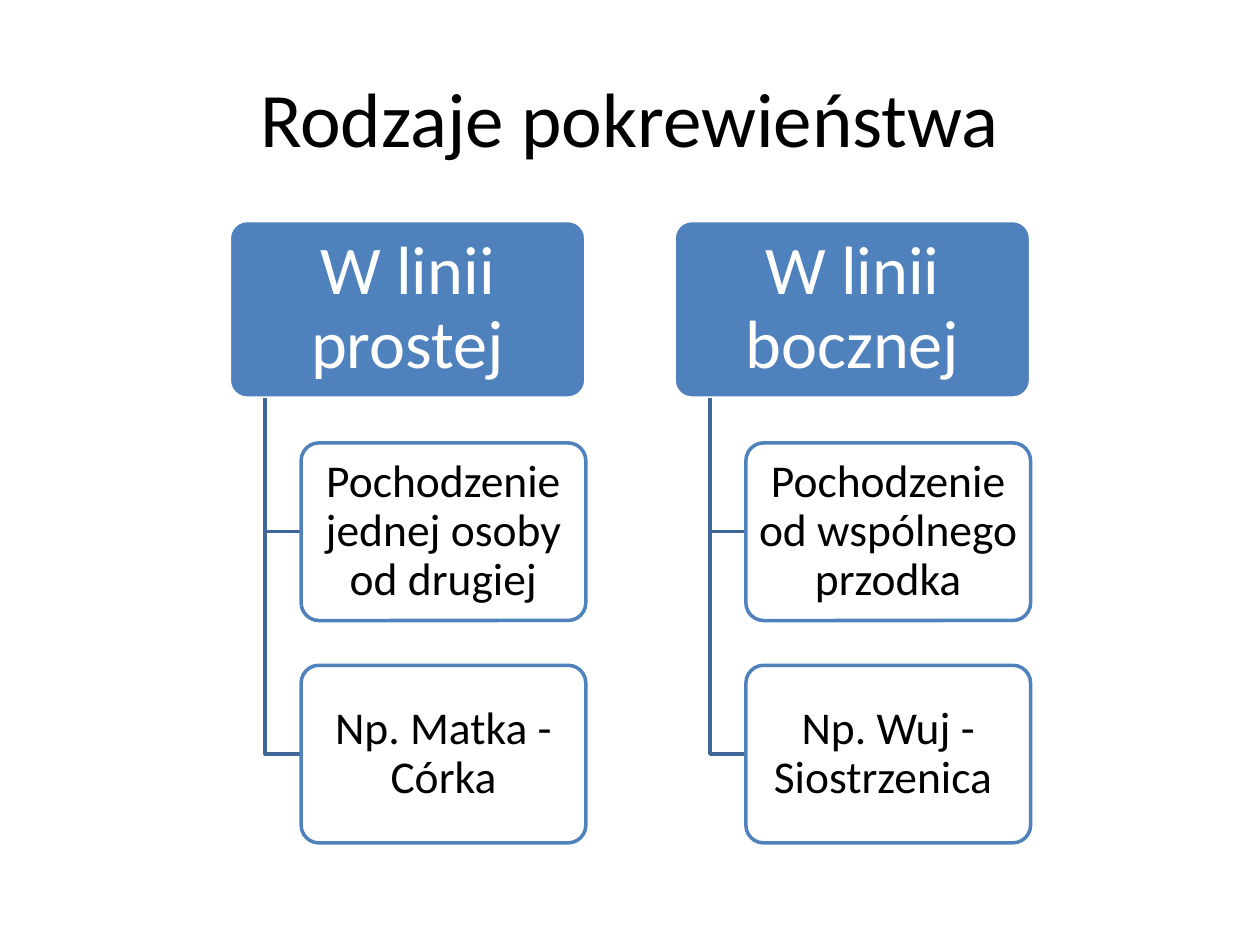
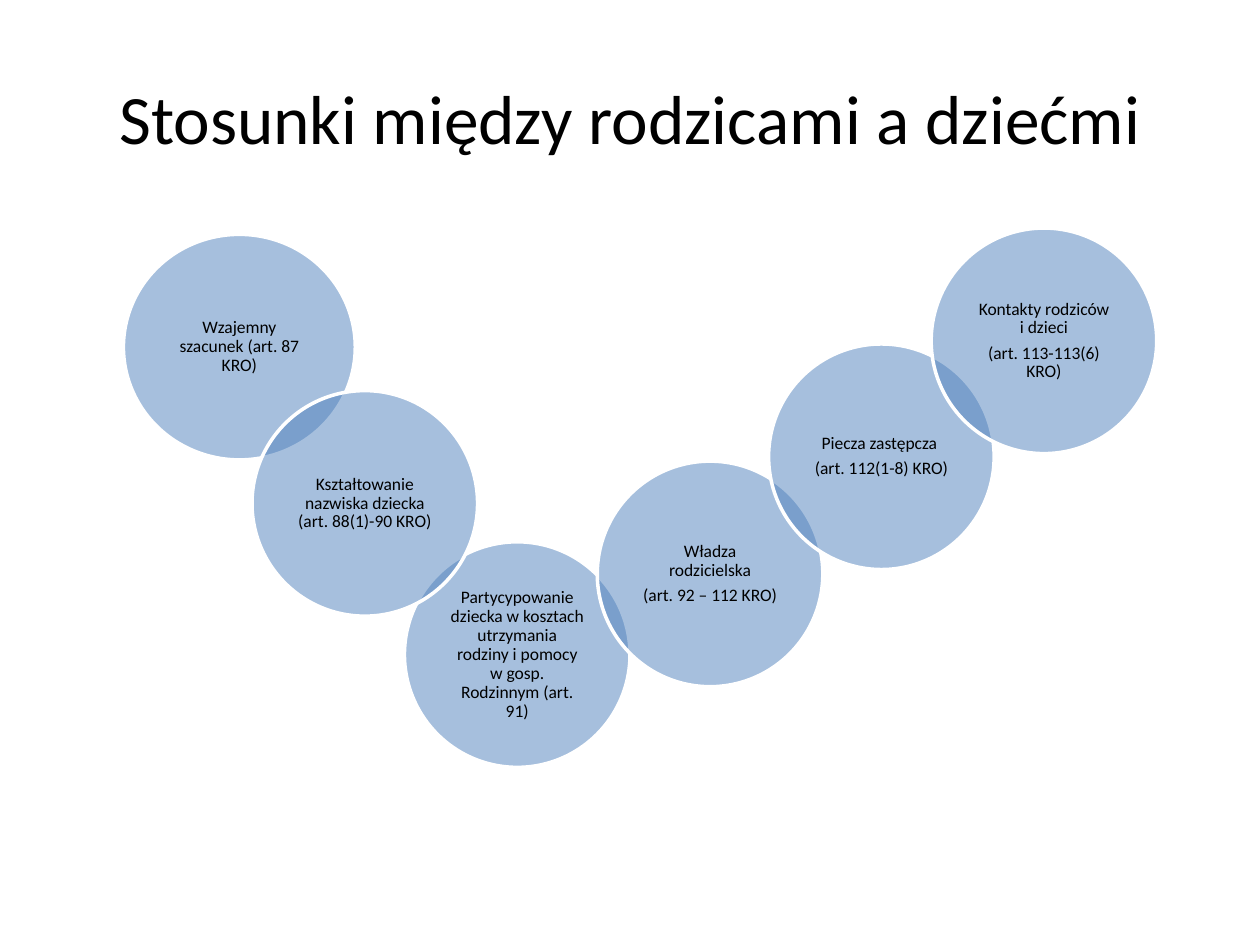
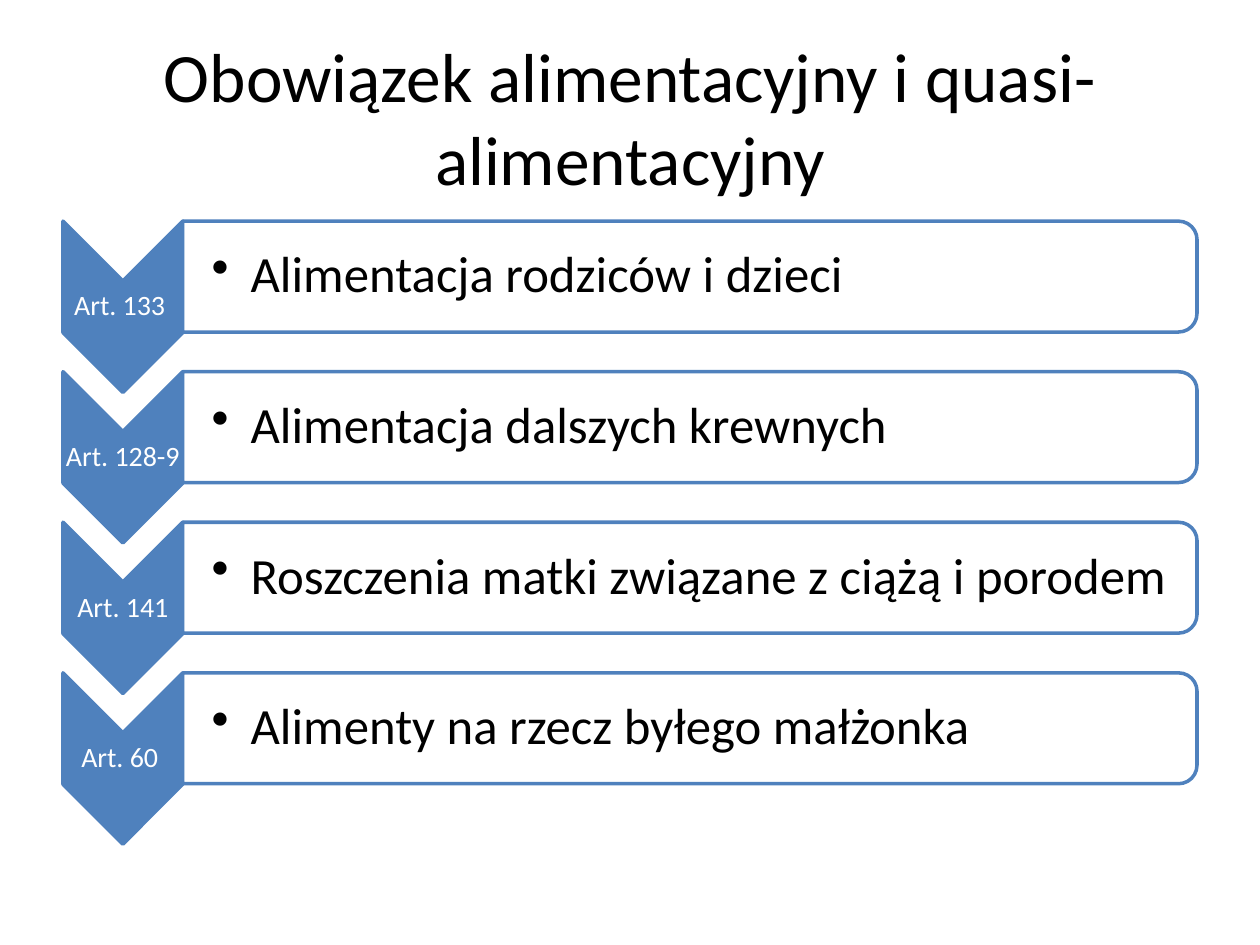
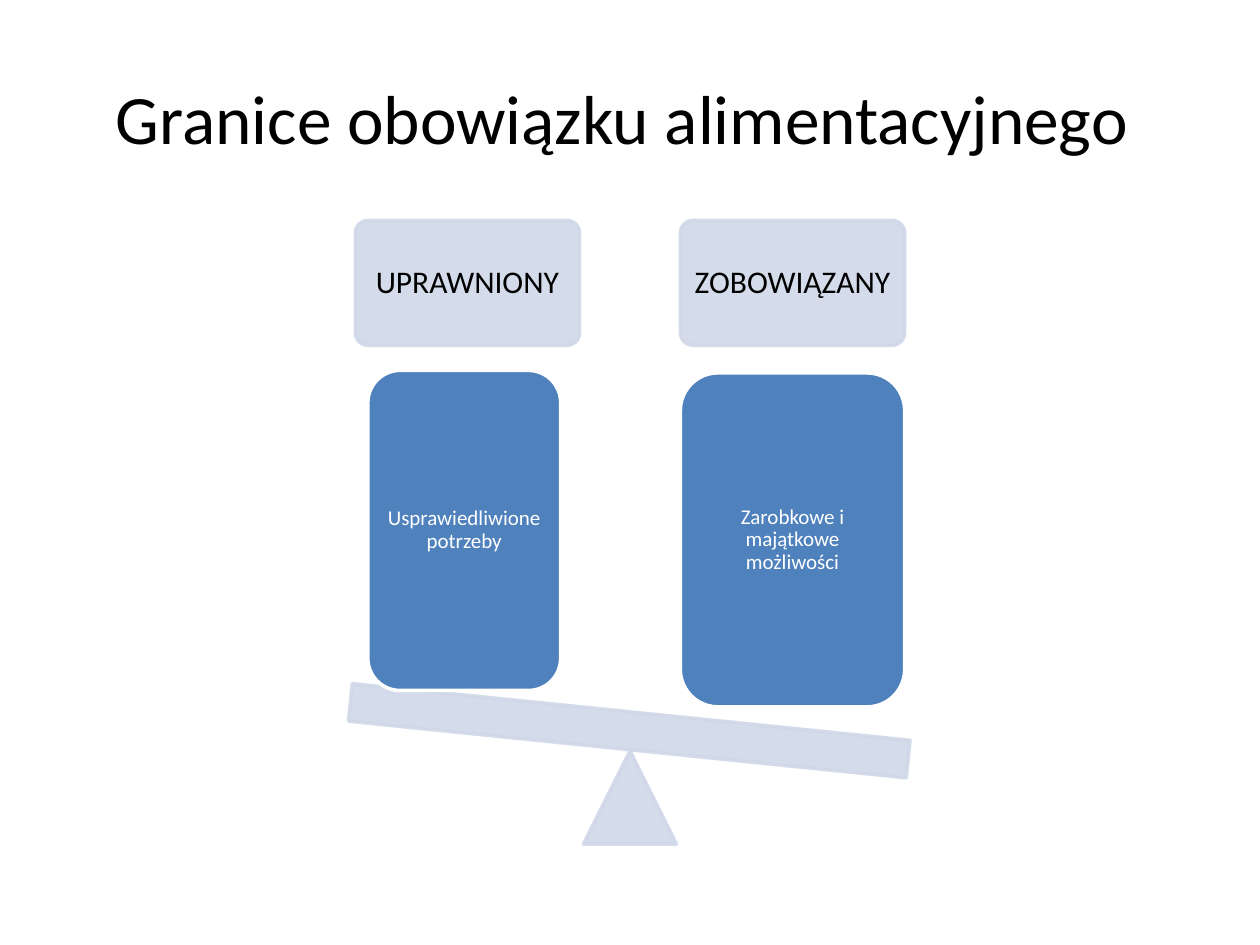
"""Build four slides of diagrams on kinship and maintenance law."""
from lxml.etree import SubElement
from pptx import Presentation
from pptx.dml.color import RGBColor
from pptx.enum.shapes import MSO_SHAPE as Form
from pptx.enum.text import MSO_ANCHOR as Anchor, MSO_AUTO_SIZE as Fit, PP_ALIGN as Align
from pptx.oxml.ns import qn
from pptx.util import Inches, Pt

BLACK = RGBColor(0x00, 0x00, 0x00)
WHITE = RGBColor(0xFF, 0xFF, 0xFF)
BLUE = RGBColor(0x4F, 0x81, 0xBD)
DARK = RGBColor(0x3F, 0x67, 0x97)
PALE = RGBColor(0xD0, 0xD8, 0xE8)
FONT = "Calibri"
WIDE, HIGH = Inches(10), Inches(7.5)
COLS, ROWS = 100, 75


def write(frame, text, size, color=BLACK, align=Align.CENTER, pad=(0, 0),
          lead=0.9, after=0.35, hang=0):
    frame.word_wrap = True
    frame.auto_size = Fit.NONE
    frame.vertical_anchor = Anchor.MIDDLE
    side, edge = pad
    frame.margin_left = frame.margin_right = Inches(side)
    frame.margin_top = frame.margin_bottom = Inches(edge)
    frame.text = text
    for para in frame.paragraphs:
        if hang:
            para.level = 1
            props = para._p.get_or_add_pPr()
            props.set("marL", str(Inches(hang)))
            props.set("indent", str(-Inches(hang)))
            SubElement(props, qn("a:buChar")).set("char", "•")
        para.alignment = align
        para.line_spacing = lead
        para.space_before = Pt(0)
        para.space_after = Pt(size * after)
        for run in para.runs:
            run.font.name = FONT
            run.font.size = Pt(size)
            run.font.color.rgb = color


class Deck:
    """Hold the shared style and the current slide."""

    def __init__(self):
        self.show = Presentation()
        self.show.slide_width, self.show.slide_height = WIDE, HIGH
        self.slide = None

    def place(self, x, y, w, h):
        return (round(WIDE * x / COLS), round(HIGH * y / ROWS),
                round(WIDE * w / COLS), round(HIGH * h / ROWS))

    def start(self, title, size=39.6):
        self.slide = self.show.slides.add_slide(self.show.slide_layouts[5])
        head = self.slide.shapes.title
        head.left, head.top, head.width, head.height = self.place(5, 3, 90, 12.5)
        write(head.text_frame, title, size, pad=(0.1, 0.05), lead=1, after=0)

    def fade(self, item, share):
        for tint in item._element.spPr.xpath(share[0]):
            SubElement(tint, qn("a:alpha")).set("val", str(share[1] * 1000))

    def shape(self, form, x, y, w, h, fill=BLUE, line=WHITE, alpha=100,
              rim=100, curve=None, turn=0, text="", **style):
        item = self.slide.shapes.add_shape(form, *self.place(x, y, w, h))
        item.shadow.inherit = False
        item.rotation = turn
        if curve is not None:
            item.adjustments[0] = curve
        item.fill.solid()
        item.fill.fore_color.rgb = fill
        item.line.color.rgb = line
        item.line.width = Pt(2)
        for part, value in (("a:solidFill", alpha), ("a:ln/a:solidFill", rim)):
            if value < 100:
                self.fade(item, (f"./{part}/a:srgbClr", value))
        if text:
            write(item.text_frame, text, **style)

    def upright(self, form, x, y, w, h, **style):
        shift = (w - h) / 2
        self.shape(form, x + shift, y - shift, h, w, turn=90, **style)

    def label(self, text, x, y, w, h, **style):
        box = self.slide.shapes.add_textbox(*self.place(x, y, w, h))
        write(box.text_frame, text, **style)

    def elbow(self, x, top, right, low):
        dots = [self.place(a, b, 0, 0)[:2]
                for a, b in ((x, top), (x, low), (right, low))]
        pen = self.slide.shapes.build_freeform(*dots[0])
        pen.add_line_segments(dots[1:], close=False)
        item = pen.convert_to_shape()
        item.shadow.inherit = False
        item.fill.background()
        item.line.color.rgb = DARK
        item.line.width = Pt(2)


def kinship(deck):
    deck.start("Rodzaje pokrewieństwa", 44)
    top, tall, step = 17.5, 14.1, 17.65
    lines = (
        ("W linii prostej", "Pochodzenie jednej osoby od drugiej",
         "Np. Matka - Córka"),
        ("W linii bocznej", "Pochodzenie od wspólnego przodka",
         "Np. Wuj - Siostrzenica "),
    )
    for col, (head, *kids) in enumerate(lines):
        x = 18.2 + 35.3 * col
        deck.shape(Form.ROUNDED_RECTANGLE, x, top, 28.3, tall, curve=0.1,
                   text=head, size=39, color=WHITE, pad=(0.08, 0.05))
        for row, kid in enumerate(kids, 1):
            y = top + step * row
            deck.elbow(x + 2.85, top + tall, x + 5.7, y + tall / 2)
            deck.shape(Form.ROUNDED_RECTANGLE, x + 5.7, y, 22.6, tall,
                       fill=WHITE, line=BLUE, alpha=90, curve=0.1,
                       text=kid, size=26, pad=(0.05, 0.04))


def family(deck):
    deck.start("Stosunki między rodzicami a dziećmi")
    size = 17.9
    rings = (
        (9.8, 18.6, 18.4, "Wzajemny szacunek (art. 87 KRO)"),
        (32.1, 43, size, "Partycypowanie dziecka w kosztach utrzymania rodziny "
                         "i pomocy w gosp. Rodzinnym (art. 91)"),
        (47.4, 36.6, size, "Władza rodzicielska\n(art. 92 – 112 KRO) "),
        (61, 27.3, size, "Piecza zastępcza \n(art. 112(1-8) KRO)"),
        (73.9, 18.1, size, "Kontakty rodziców i dzieci\n(art. 113-113(6) KRO)"),
        (20, 31, size, "Kształtowanie nazwiska dziecka (art. 88(1)-90 KRO)"),
    )
    for x, y, wide, text in rings:
        deck.shape(Form.OVAL, x, y, wide, size, alpha=50,
                   text=text, size=10, pad=(0.1, 0.01))


def duties(deck):
    deck.start("Obowiązek alimentacyjny i quasi-alimentacyjny")
    items = (
        ("Art. 133 ", "Alimentacja rodziców i dzieci"),
        ("Art. 128-9", "Alimentacja dalszych krewnych"),
        ("Art. 141", "Roszczenia matki związane z ciążą i porodem"),
        ("Art. 60 ", "Alimenty na rzecz byłego małżonka"),
    )
    for row, (mark, text) in enumerate(items):
        y = 17.55 + 11.95 * row
        deck.upright(Form.CHEVRON, 5, y, 9.5, 13.6, line=BLUE)
        deck.label(mark, 5, y + 4.75, 9.5, 4.1, size=16, color=WHITE,
                   pad=(0.01, 0.01))
        deck.upright(Form.ROUND_2_SAME_RECTANGLE, 14.5, y, 80.5, 8.8,
                     fill=WHITE, line=BLUE, alpha=90)
        deck.label(text, 16.6, y + 0.4, 78, 8, size=29, align=Align.LEFT,
                   pad=(0.02, 0.02), after=0.15, hang=0.31)


def limits(deck):
    deck.start("Granice obowiązku alimentacyjnego ")
    pale = dict(fill=PALE, line=PALE, alpha=90, rim=90)
    for x, text in ((28.2, "UPRAWNIONY"), (54, "ZOBOWIĄZANY")):
        deck.shape(Form.ROUNDED_RECTANGLE, x, 17.5, 17.8, 9.9, curve=0.1,
                   text=text, size=18, pad=(0.07, 0.07), **pale)
    deck.shape(Form.ISOSCELES_TRIANGLE, 46.3, 59.6, 7.4, 7.4, **pale)
    deck.shape(Form.RECTANGLE, 27.7, 56.5, 44.5, 3, turn=5.8, **pale)
    loads = (
        (29.2, 29.4, 15.3, 25.4, "Usprawiedliwione potrzeby"),
        (54, 29.6, 17.8, 26.5, "Zarobkowe i majątkowe możliwości"),
    )
    for *spot, text in loads:
        deck.shape(Form.ROUNDED_RECTANGLE, *spot, text=text, size=12,
                   color=WHITE, pad=(0.05, 0.05))


def main():
    deck = Deck()
    for build in (kinship, family, duties, limits):
        build(deck)
    deck.show.save("out.pptx")


if __name__ == "__main__":
    main()
